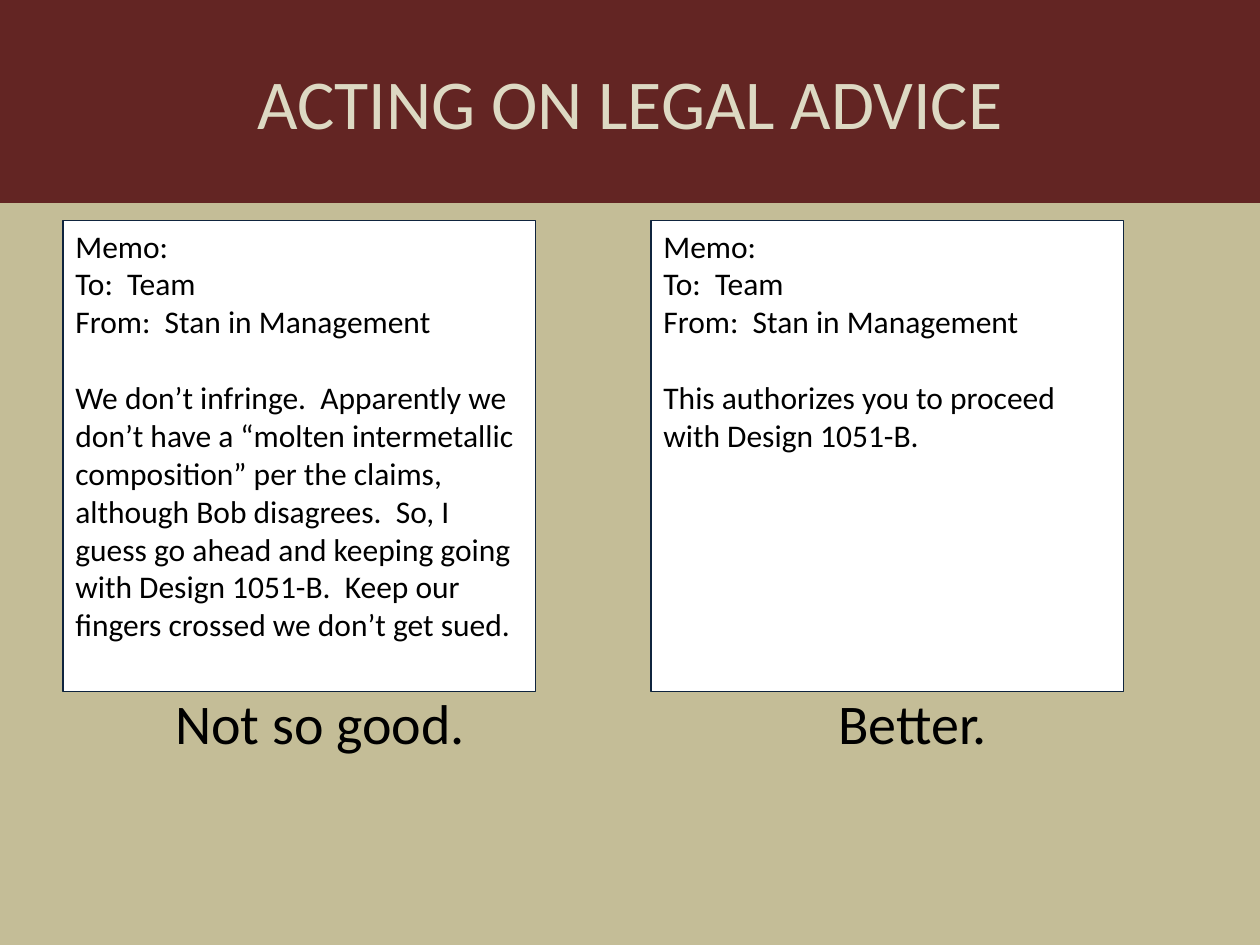
from dataclasses import dataclass

import pptx
import pptx.dml.color
import pptx.enum.shapes
import pptx.enum.text
import pptx.util

Pt = pptx.util.Pt
Align = pptx.enum.text.PP_ALIGN
Anchor = pptx.enum.text.MSO_ANCHOR

FONT = "Calibri"
SLIDE_WIDTH, SLIDE_HEIGHT = 720, 540
BACKGROUND, BANNER, TITLE = "C4BD97", "632523", "DDD9C3"
PAPER, BORDER, INK = "FFFFFF", "0F243E", "000000"
HEADER = ["Memo:", "To:  Team", "From:  Stan in Management"]
BODY_GAP = 21.97  # one 18 pt line


@dataclass
class Box:
    left: float
    top: float
    width: float
    height: float


@dataclass
class Memo:
    left: float
    body: str
    caption: str
    caption_left: float


MEMOS = [
    Memo(
        36,
        "We don’t infringe.  Apparently we don’t have a “molten intermetallic "
        "composition” per the claims, although Bob disagrees.  So, I guess go "
        "ahead and keeping going with Design 1051-B.  Keep our fingers crossed "
        "we don’t get sued.",
        "Not so good.",
        48,
    ),
    Memo(
        372,
        "This authorizes you to proceed with Design 1051-B.",
        "Better.",
        386.5,
    ),
]


def color(value: str) -> pptx.dml.color.RGBColor:
    return pptx.dml.color.RGBColor.from_string(value)


def write(shape, lines: list[str], size: float, ink: str, alignment, anchor) -> None:
    frame = shape.text_frame
    frame.word_wrap = True
    frame.vertical_anchor = anchor
    frame.text = "\n".join(lines)
    for paragraph in frame.paragraphs:
        paragraph.alignment = alignment
        for run in paragraph.runs:
            run.font.name = FONT
            run.font.size = Pt(size)
            run.font.color.rgb = color(ink)


def add_rectangle(slide, box: Box, fill: str, line: str | None = None):
    shape = slide.shapes.add_shape(
        pptx.enum.shapes.MSO_SHAPE.RECTANGLE,
        Pt(box.left), Pt(box.top), Pt(box.width), Pt(box.height),
    )
    shape.shadow.inherit = False
    shape.fill.solid()
    shape.fill.fore_color.rgb = color(fill)
    if line:
        shape.line.color.rgb = color(line)
        shape.line.width = Pt(0.75)
    else:
        shape.line.fill.background()
    return shape


def add_banner(slide, title: str) -> None:
    banner = add_rectangle(slide, Box(0, 0, SLIDE_WIDTH, 116), BANNER)
    write(banner, [title], 40, TITLE, Align.CENTER, Anchor.MIDDLE)


def add_memo(slide, memo: Memo) -> None:
    sheet = add_rectangle(slide, Box(memo.left, 126, 270, 269), PAPER, BORDER)
    write(sheet, HEADER + [memo.body], 18, INK, Align.LEFT, Anchor.TOP)
    sheet.text_frame.paragraphs[-1].space_before = Pt(BODY_GAP)


def add_caption(slide, memo: Memo) -> None:
    caption = slide.shapes.add_textbox(
        Pt(memo.caption_left), Pt(390), Pt(270), Pt(46)
    )
    write(caption, [memo.caption], 32, INK, Align.CENTER, Anchor.TOP)


def main() -> None:
    presentation = pptx.Presentation()
    presentation.slide_width = Pt(SLIDE_WIDTH)
    presentation.slide_height = Pt(SLIDE_HEIGHT)
    slide = presentation.slides.add_slide(presentation.slide_layouts[6])
    slide.background.fill.solid()
    slide.background.fill.fore_color.rgb = color(BACKGROUND)

    add_banner(slide, "ACTING ON LEGAL ADVICE")
    for memo in MEMOS:
        add_memo(slide, memo)
    for memo in MEMOS:
        add_caption(slide, memo)
    presentation.save("out.pptx")


if __name__ == "__main__":
    main()
